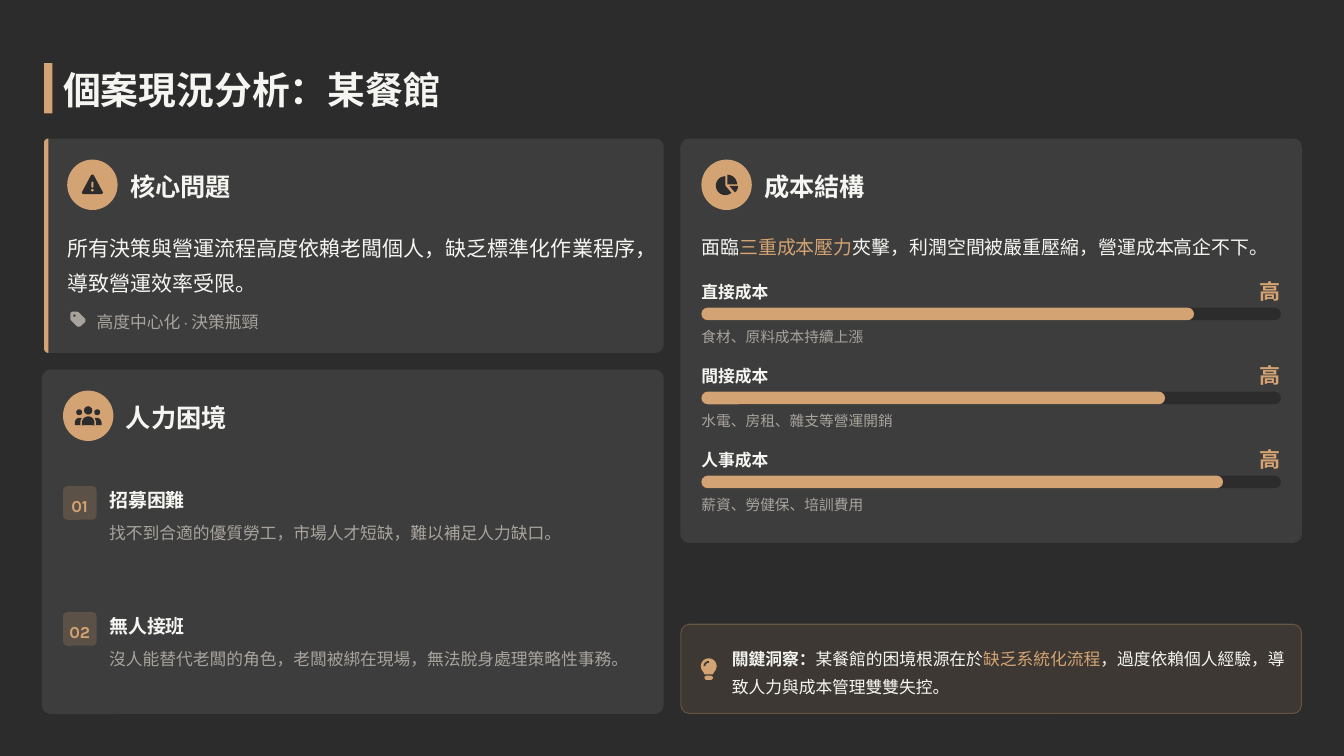
from math import cos, radians, sin

from lxml.etree import SubElement
from pptx import Presentation
from pptx.dml.color import RGBColor
from pptx.enum.shapes import MSO_SHAPE as Shape
from pptx.enum.text import MSO_ANCHOR as Anchor, MSO_AUTO_SIZE as AutoSize, PP_ALIGN as Align
from pptx.oxml.ns import qn
from pptx.util import Pt

DARK, PANEL, ACCENT = "2C2C2C", "3D3D3D", "D4A373"
LIGHT, MUTED, TINTED = "F5F5F1", "A8A39D", "3D3833"
HEADING, BODY = "Noto Sans CJK SC", "Karla"
BUSINESS = "某餐館"


def color(value):
    return RGBColor.from_string(value)


def set_alpha(fill_parent, percent):
    rgb = fill_parent.find(qn("a:solidFill")).find(qn("a:srgbClr"))
    SubElement(rgb, qn("a:alpha")).set("val", str(percent * 1000))


def paint(shape, fill):
    shape.shadow.inherit = False
    shape.fill.solid()
    shape.fill.fore_color.rgb = color(fill)
    shape.line.fill.background()
    return shape


def add_preset(slide, kind, left, top, width, height, fill):
    shape = slide.shapes.add_shape(kind, Pt(left), Pt(top), Pt(width), Pt(height))
    return paint(shape, fill)


def add_rounded(slide, left, top, width, height, radius, fill):
    shape = add_preset(slide, Shape.ROUNDED_RECTANGLE, left, top, width, height, fill)
    shape.adjustments[0] = radius / min(width, height)
    return shape


def add_circle(slide, left, top, size, fill):
    return add_preset(slide, Shape.OVAL, left, top, size, size, fill)


def arc(x, y, radius, start, end):
    """Points of an arc; angles in degrees, clockwise from the right."""
    steps = 16
    angles = [radians(start + (end - start) * i / steps) for i in range(steps + 1)]
    return [(x + radius * cos(a), y + radius * sin(a)) for a in angles]


def add_outline(slide, points, fill):
    first, *rest = [(Pt(x), Pt(y)) for x, y in points]
    builder = slide.shapes.build_freeform(*first)
    builder.add_line_segments(rest, close=True)
    return paint(builder.convert_to_shape(), fill)


def write(shape, spans, size, spacing, font=BODY):
    """Fill a text shape with spans of (words, colour, bold)."""
    frame = shape.text_frame
    frame.word_wrap = True
    frame.auto_size = AutoSize.NONE
    frame.vertical_anchor = Anchor.MIDDLE
    frame.margin_left = frame.margin_top = frame.margin_right = frame.margin_bottom = 0
    para = frame.paragraphs[0]
    para.alignment = Align.LEFT
    para.line_spacing = spacing
    for words, ink, bold in spans:
        span = para.add_run()
        span.text = words
        span.font.size = Pt(size)
        span.font.bold = bold
        span.font.name = font
        span.font.color.rgb = color(ink)
        SubElement(span.font._element, qn("a:ea")).set("typeface", font)


def add_text(slide, left, top, width, height, spans, size, spacing, font=BODY):
    box = slide.shapes.add_textbox(Pt(left), Pt(top), Pt(width), Pt(height))
    write(box, spans, size, spacing, font)


def add_title(slide, words):
    add_preset(slide, Shape.RECTANGLE, 42, 60, 8, 48, ACCENT)
    title = slide.shapes.title
    title.left, title.top, title.width, title.height = Pt(60), Pt(68), Pt(607), Pt(40)
    write(title, [(words, LIGHT, True)], 36, 0.9, HEADING)


def add_card_heading(slide, left, top, words):
    add_circle(slide, left, top, 48, ACCENT)
    add_text(slide, left + 60, top + 8.5, 111, 31, [(words, LIGHT, True)], 24, 1.1, HEADING)


def add_warning_icon(slide):
    add_outline(slide, arc(88, 168, 1.7, 210, 330) + arc(96.2, 183.3, 1.7, -30, 90)
                + arc(79.8, 183.3, 1.7, 90, 210), DARK)
    add_rounded(slide, 87.1, 173, 1.8, 5.8, 0.9, ACCENT)
    add_circle(slide, 86.8, 180, 2.4, ACCENT)


def add_tag_icon(slide):
    add_outline(slide, [(67, 298.5), (68.7, 296.7), (73.4, 296.7), (74.9, 297.4),
                        (81.4, 303.8), (81.4, 306.5), (76.4, 311), (73.4, 311),
                        (67.7, 305.3), (67, 303.8)], MUTED)
    add_circle(slide, 69.8, 299.5, 2.2, PANEL)


def add_people_icon(slide):
    for left, top, size in ((80, 386.9, 8), (72.6, 389.8, 5.6), (89.8, 389.8, 5.6)):
        add_circle(slide, left, top, size, DARK)
    bodies = ((76, 4.7, DARK), (92, 4.7, DARK), (84, 7.4, ACCENT), (84, 6, DARK))
    for x, radius, fill in bodies:
        dome = arc(x, 402.6, radius, 180, 360)
        add_outline(slide, dome + [(x + radius, 405), (x - radius, 405)], fill)


def add_pie_icon(slide):
    for x, y, radius, start, end in ((690.8, 176.8, 9, 50, 270), (692.7, 175.7, 9.3, -90, 0),
                                     (694.8, 177.1, 8.1, 0, 50)):
        add_outline(slide, [(x, y)] + arc(x, y, radius, start, end), DARK)


def add_bulb_icon(slide):
    x, y = 675, 634.5
    add_outline(slide, arc(x, y, 7.5, 135, 405) + [(679, 642.2), (671, 642.2)], ACCENT)
    add_rounded(slide, 671, 643.5, 8, 4, 1.9, ACCENT)
    add_outline(slide, arc(x, y, 4.9, 180, 270) + arc(x, y, 3.3, 270, 180), TINTED)


def add_core_problem(slide):
    left, top, right, bottom = 42, 132, 632, 336
    left_side = arc(left + 4, bottom - 4, 4, 90, 180) + arc(left + 4, top + 4, 4, 180, 270)
    right_side = arc(right - 8, top + 8, 8, -90, 0) + arc(right - 8, bottom - 8, 8, 0, 90)
    add_outline(slide, left_side + right_side, PANEL)
    add_outline(slide, left_side, ACCENT)
    add_card_heading(slide, 64, 152, "核心問題")
    add_warning_icon(slide)
    words = "所有決策與營運流程高度依賴老闆個人，缺乏標準化作業程序，導致營運效率受限。"
    add_text(slide, 64, 216, 558, 64, [(words, LIGHT, False)], 20, 1.4)
    add_tag_icon(slide)
    add_text(slide, 92, 292, 169, 24, [("高度中心化 · 決策瓶頸", MUTED, False)], 16, 1.3)


def add_staffing(slide):
    add_rounded(slide, 40, 352, 592, 328, 8, PANEL)
    add_card_heading(slide, 60, 372, "人力困境")
    add_people_icon(slide)
    items = (("01", 68, 25, "招募困難", "找不到合適的優質勞工，市場人才短缺，難以補足人力缺口。"),
             ("02", 66, 28, "無人接班", "沒人能替代老闆的角色，老闆被綁在現場，無法脫身處理策略性事務。"))
    for i, (number, left, width, name, note) in enumerate(items):
        top = 463 + 120 * i
        badge = add_rounded(slide, 60, top, 32, 32, 4, ACCENT)
        set_alpha(badge._element.spPr, 20)
        add_text(slide, left, top + 4, width, 24, [(number, ACCENT, True)], 16, 1.3)
        add_text(slide, 104, top - 4, 505, 28, [(name, LIGHT, True)], 18, 1.3)
        add_text(slide, 104, top + 28, 505, 26, [(note, MUTED, False)], 16, 1.4)


def add_costs(slide):
    add_rounded(slide, 648, 132, 592, 385, 8, PANEL)
    add_card_heading(slide, 668, 152, "成本結構")
    add_pie_icon(slide)
    add_text(slide, 668, 216, 561, 29, [
        ("面臨", LIGHT, False), ("三重成本壓力", ACCENT, False),
        ("夾擊，利潤空間被嚴重壓縮，營運成本高企不下。", LIGHT, False)], 18, 1.4)
    costs = (("直接成本", 0.85, "食材、原料成本持續上漲"),
             ("間接成本", 0.80, "水電、房租、雜支等營運開銷"),
             ("人事成本", 0.90, "薪資、勞健保、培訓費用"))
    for i, (name, share, note) in enumerate(costs):
        top = 263 + 80 * i
        add_text(slide, 668, top, 74, 24, [(name, LIGHT, True)], 16, 1.3)
        add_text(slide, 1199.5, top - 2, 31, 28, [("高", ACCENT, True)], 20, 1.2)
        add_rounded(slide, 668, top + 30, 552, 12, 6, DARK)
        add_rounded(slide, 668, top + 30, 552 * share, 12, 6, ACCENT)
        add_text(slide, 668, top + 46, 559, 20, [(note, MUTED, False)], 14, 1.2)


def add_insight(slide):
    panel = add_rounded(slide, 648.5, 594.5, 591, 85, 8, ACCENT)
    panel.line.color.rgb = color(ACCENT)
    panel.line.width = Pt(1)
    set_alpha(panel._element.spPr, 10)
    set_alpha(panel._element.spPr.find(qn("a:ln")), 30)
    add_bulb_icon(slide)
    add_text(slide, 697, 611, 534, 52, [
        ("關鍵洞察：", LIGHT, True), (f"{BUSINESS}的困境根源在於", LIGHT, False),
        ("缺乏系統化流程", ACCENT, False),
        ("，過度依賴個人經驗，導致人力與成本管理雙雙失控。", LIGHT, False)], 16, 1.4)


def main():
    deck = Presentation()
    deck.slide_width, deck.slide_height = Pt(1280), Pt(720)
    page = deck.slides.add_slide(deck.slide_layouts[5])
    page.background.fill.solid()
    page.background.fill.fore_color.rgb = color(DARK)
    add_title(page, f"個案現況分析：{BUSINESS}")
    add_core_problem(page)
    add_staffing(page)
    add_costs(page)
    add_insight(page)
    deck.save("out.pptx")


if __name__ == "__main__":
    main()
